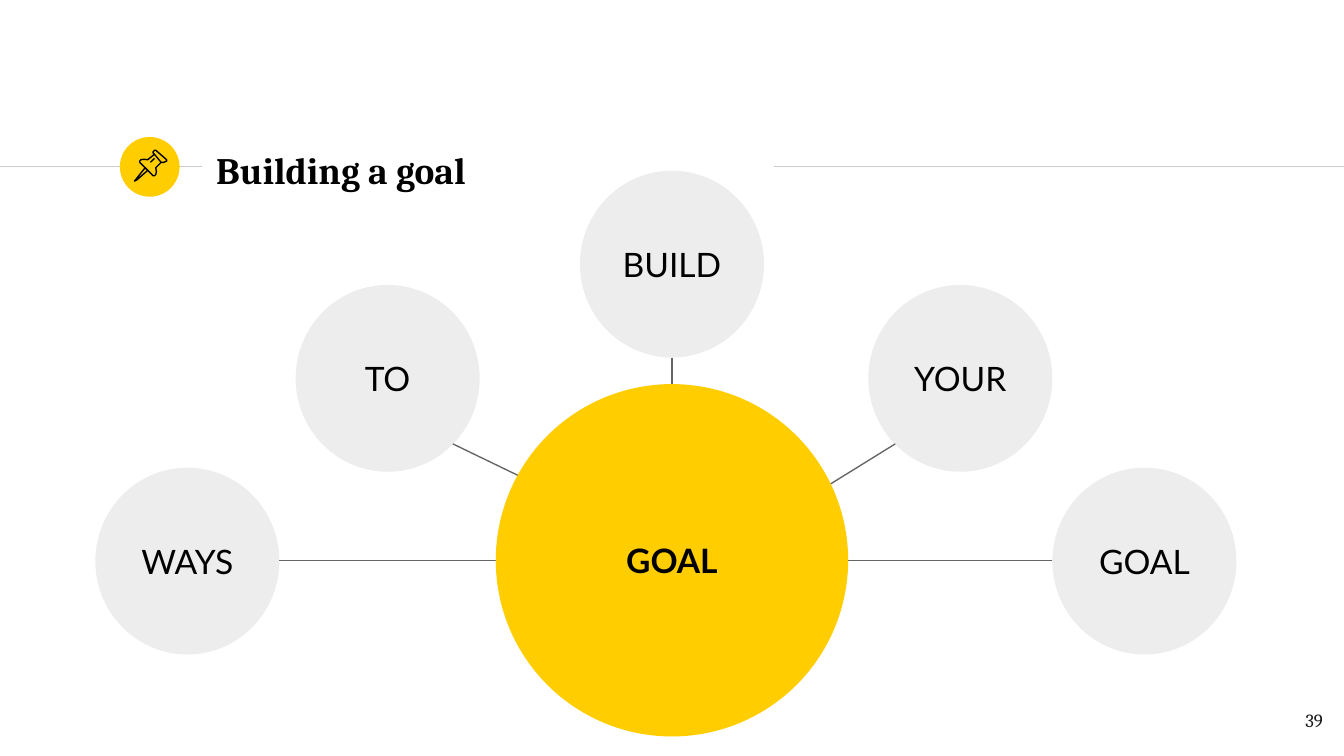
from lxml.etree import SubElement
from pptx import Presentation
from pptx.dml.color import RGBColor as RGB
from pptx.enum.shapes import MSO_CONNECTOR as LINE, MSO_SHAPE as SHAPE
from pptx.enum.text import MSO_ANCHOR as ANCHOR, PP_ALIGN as ALIGN
from pptx.oxml.ns import qn
from pptx.util import Pt

COLORS = {"gold": "FFCD00", "black": "000000", "rule": "CCCCCC",
          "spoke": "666666", "number": "1D1D1B"}

# Pushpin outlines, relative to the badge: points and whether closed
PIN = [
    ([(13.8, 16.5), (8.4, 23.3), (8, 23.7), (9.4, 23), (15.2, 17.9)], True),
    ([(18.8, 9.3), (22.4, 13.6), (23.8, 13.6), (25.3, 12.9), (25.3, 12.2),
      (19.5, 7.1), (18.8, 7.1), (18.1, 7.9), (18.1, 8.6)], True),
    ([(18.8, 9.3), (15.2, 12.2), (13, 12), (11.6, 12.2), (10.9, 12.9),
      (10.9, 13.6), (18.1, 20.8), (18.8, 20.8), (19.5, 20.1), (19.8, 18.7),
      (19.5, 16.5), (22.4, 13.6)], False),
    ([(16.6, 13.6), (18.8, 11.5)], False),
]


def color(name):
    return RGB.from_string(COLORS[name])


def write(shape, text, size, font, ink="black", bold=False,
          align=ALIGN.LEFT, anchor=ANCHOR.MIDDLE):
    frame = shape.text_frame
    frame.word_wrap = True
    frame.margin_left = frame.margin_right = Pt(7.2)
    frame.margin_top = frame.margin_bottom = Pt(7.2)
    frame.vertical_anchor = anchor
    frame.text = text
    para = frame.paragraphs[0]
    para.alignment = align
    face = para.runs[0].font
    face.size, face.name, face.bold = Pt(size), font, bold
    face.color.rgb = color(ink)


def add_text(slide, box, text, size, **style):
    shape = slide.shapes.add_textbox(*map(Pt, box))
    write(shape, text, size, "Cambria", **style)


def add_line(slide, start, end, ink):
    line = slide.shapes.add_connector(LINE.STRAIGHT, *map(Pt, start + end))
    line.line.color.rgb = color(ink)
    line.line.width = Pt(0.75)
    SubElement(line._element.spPr, qn("a:effectLst"))


def add_oval(slide, box, fill, alpha=None):
    oval = slide.shapes.add_shape(SHAPE.OVAL, *map(Pt, box))
    oval.shadow.inherit = False
    oval.fill.solid()
    oval.fill.fore_color.rgb = color(fill)
    oval.line.fill.background()
    if alpha:
        tint = oval._element.spPr.find(".//" + qn("a:srgbClr"))
        SubElement(tint, qn("a:alpha")).set("val", str(alpha * 1000))
    return oval


def add_pin(slide, left, top):
    for dots, closed in PIN:
        path = [(Pt(left + x), Pt(top + y)) for x, y in dots]
        pen = slide.shapes.build_freeform(*path[0])
        pen.add_line_segments(path[1:], close=closed)
        part = pen.convert_to_shape()
        part.shadow.inherit = False
        part.fill.background()
        part.line.color.rgb = color("black")
        part.line.width = Pt(0.75)


def add_header(slide, left, top, width, height):
    mid = top + 15.8
    add_line(slide, (left, mid), (left + 108, mid), "rule")
    add_line(slide, (left + 414.7, mid), (left + width, mid), "rule")
    add_oval(slide, (left + 64.2, top, 32, 32), "gold")
    add_pin(slide, left + 64, top)
    add_text(slide, (left + 108.7, top, 305.3, height),
             "Building a goal", 20, bold=True)


def add_goal(slide, left, top, width, height):
    hub = 188.8
    wide, tall = 98.6, 100.1
    mid_x, mid_y = left + 308.9, top + height - hub / 2
    edge = hub / 2
    # Word, centre of its circle, start and end of its spoke, from the hub
    spokes = [
        ("BUILD", (0, -158.7), (0, -108.6), (0, -edge)),
        ("WAYS", (-259.6, 0.4), (-210.3, 0), (-edge, 0)),
        ("GOAL", (width - 308.9 - wide / 2, 0.4), (203.8, 0), (edge, 0)),
        ("YOUR", (154.5, -97.5), (119.6, -62.4), (82.8, -39.6)),
        ("TO", (-152.3, -97.5), (-117.4, -62.4), (-80.6, -44.6)),
    ]
    for word, (x, y), start, end in spokes:
        box = (mid_x + x - wide / 2, mid_y + y - tall / 2, wide, tall)
        oval = add_oval(slide, box, "black", alpha=7)
        write(oval, word, 18, "Lato", align=ALIGN.CENTER)
        add_line(slide, (mid_x + start[0], mid_y + start[1]),
                 (mid_x + end[0], mid_y + end[1]), "spoke")
    # Hub covers the inner ends of the spokes
    oval = add_oval(slide, (mid_x - edge, mid_y - edge, hub, hub), "gold")
    write(oval, "GOAL", 18, "Lato", bold=True, align=ALIGN.CENTER)


def main():
    deck = Presentation()
    deck.slide_width, deck.slide_height = Pt(720), Pt(405)
    slide = deck.slides.add_slide(deck.slide_layouts[6])
    add_header(slide, 0, 73.4, 720, 34.6)
    add_text(slide, (672.5, 373.7, 43.2, 31), "39", 10, ink="number",
             align=ALIGN.RIGHT, anchor=ANCHOR.TOP)
    add_goal(slide, 51.1, 91.4, 611.3, 303.2)
    deck.save("out.pptx")


if __name__ == "__main__":
    main()
